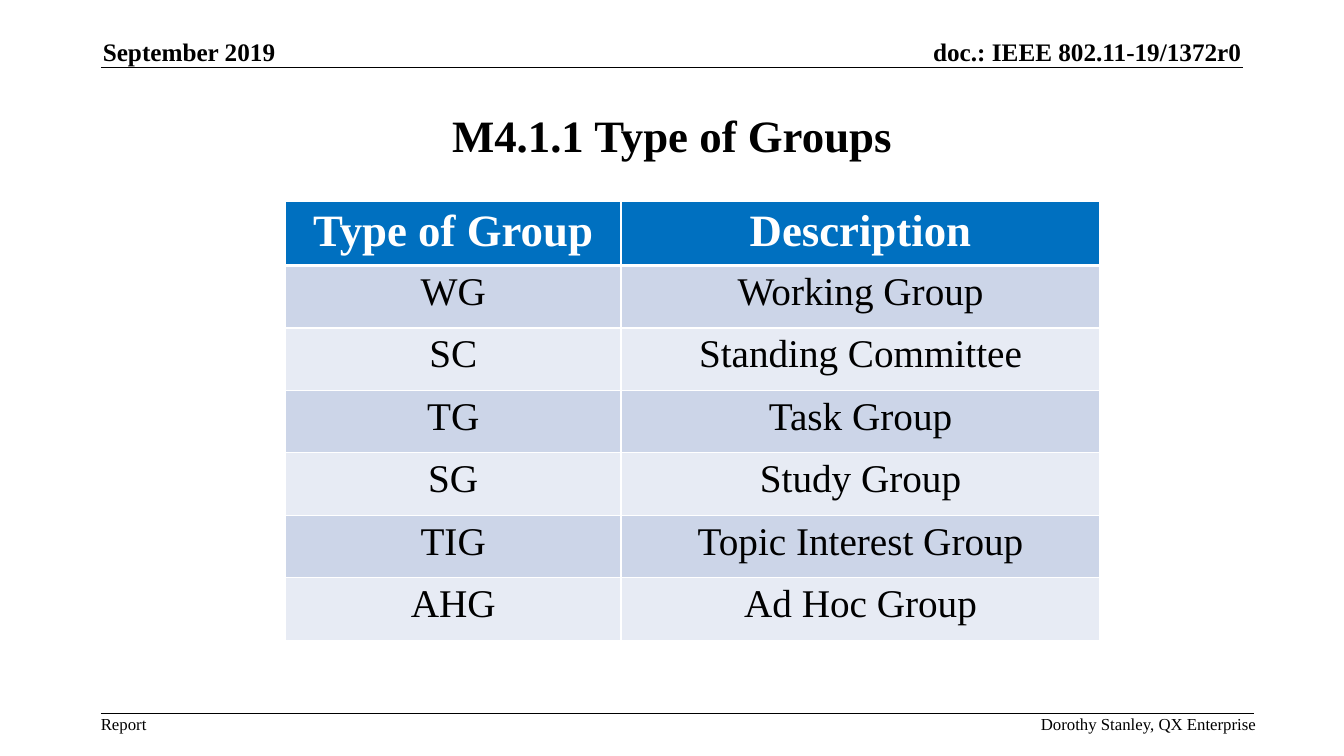
import pptx
import pptx.util
import pptx.dml.color
import pptx.enum.text
import pptx.enum.shapes
import pptx.oxml
import pptx.oxml.ns
import lxml.etree

Inches = pptx.util.Inches
Pt = pptx.util.Pt
RGBColor = pptx.dml.color.RGBColor
Align = pptx.enum.text.PP_ALIGN
Anchor = pptx.enum.text.MSO_ANCHOR

BLACK = RGBColor(0x00, 0x00, 0x00)
WHITE = RGBColor(0xFF, 0xFF, 0xFF)
HEADER_BLUE = RGBColor(0x00, 0x70, 0xC0)
BAND_DARK = RGBColor(0xCC, 0xD5, 0xE8)
BAND_LIGHT = RGBColor(0xE7, 0xEB, 0xF4)


def format_paragraph(para, size, bold, color, align):
    para.alignment = align
    para.font.name = "Times New Roman"
    para.font.size = Pt(size)
    para.font.bold = bold
    para.font.color.rgb = color


def add_border(cell, side, width):
    line = pptx.oxml.parse_xml(
        f'<a:{side} {pptx.oxml.ns.nsdecls("a")} w="{Pt(width)}">'
        f'<a:solidFill><a:srgbClr val="{WHITE}"/></a:solidFill></a:{side}>'
    )
    cell._tc.get_or_add_tcPr().append(line)


deck = pptx.Presentation()
deck.slide_width = Inches(13.33)
deck.slide_height = Inches(7.5)
page = deck.slides.add_slide(deck.slide_layouts[5])

title = page.shapes.title
title.left, title.top = Inches(1), Inches(0.75)
title.width, title.height = Inches(11.33), Inches(1.17)
title.text_frame.text = "M4.1.1 Type of Groups"
title.text_frame.vertical_anchor = Anchor.MIDDLE
format_paragraph(title.text_frame.paragraphs[0], 32, True, BLACK, Align.CENTER)

for rule_top, rule_right in [(0.67, 12.33), (7.08, 12.44)]:
    rule = page.shapes.add_connector(
        pptx.enum.shapes.MSO_CONNECTOR.STRAIGHT,
        Inches(1), Inches(rule_top), Inches(rule_right), Inches(rule_top),
    )
    rule.line.color.rgb = BLACK
    rule.line.width = Pt(1)
    lxml.etree.SubElement(rule._element.spPr, pptx.oxml.ns.qn("a:effectLst"))

margin_texts = [
    ("September 2019", 1.02, 0.36, 1.9, 0.3, 18, True, Align.LEFT, Anchor.BOTTOM),
    ("doc.: IEEE 802.11-19/1372r0", 8.72, 0.36, 3.59, 0.3, 18, True, Align.RIGHT, Anchor.BOTTOM),
    ("Report", 1, 7.08, 0.6, 0.2, 12, False, Align.LEFT, Anchor.TOP),
    ("Dorothy Stanley, QX Enterprise", 10.09, 7.08, 2.37, 0.2, 12, False, Align.RIGHT, Anchor.TOP),
]
for text, left, top, width, height, size, bold, align, anchor in margin_texts:
    box = page.shapes.add_textbox(Inches(left), Inches(top), Inches(width), Inches(height))
    frame = box.text_frame
    frame.margin_left = frame.margin_right = frame.margin_top = frame.margin_bottom = 0
    frame.word_wrap = True
    frame.vertical_anchor = anchor
    frame.text = text
    format_paragraph(frame.paragraphs[0], size, bold, BLACK, align)

groups = [
    ("Type of Group", "Description"),
    ("WG", "Working Group"),
    ("SC", "Standing Committee"),
    ("TG", "Task Group"),
    ("SG", "Study Group"),
    ("TIG", "Topic Interest Group"),
    ("AHG", "Ad Hoc Group"),
]
table = page.shapes.add_table(
    len(groups), 2, Inches(2.83), Inches(2), Inches(8.08), Inches(4.34)
).table
table.columns[0].width = Inches(3.33)
table.columns[1].width = Inches(4.75)

for row, group in enumerate(groups):
    table.rows[row].height = Inches(0.62)
    header = row == 0
    fill = HEADER_BLUE if header else BAND_DARK if row % 2 else BAND_LIGHT
    for column, text in enumerate(group):
        cell = table.cell(row, column)
        for side in ("lnL", "lnR"):
            add_border(cell, side, 1)
        add_border(cell, "lnT", 3 if row == 1 else 1)
        add_border(cell, "lnB", 3 if header else 1)
        cell.fill.solid()
        cell.fill.fore_color.rgb = fill
        cell.text = text
        format_paragraph(
            cell.text_frame.paragraphs[0],
            32 if header else 28, header, WHITE if header else BLACK, Align.CENTER,
        )

deck.save("out.pptx")
